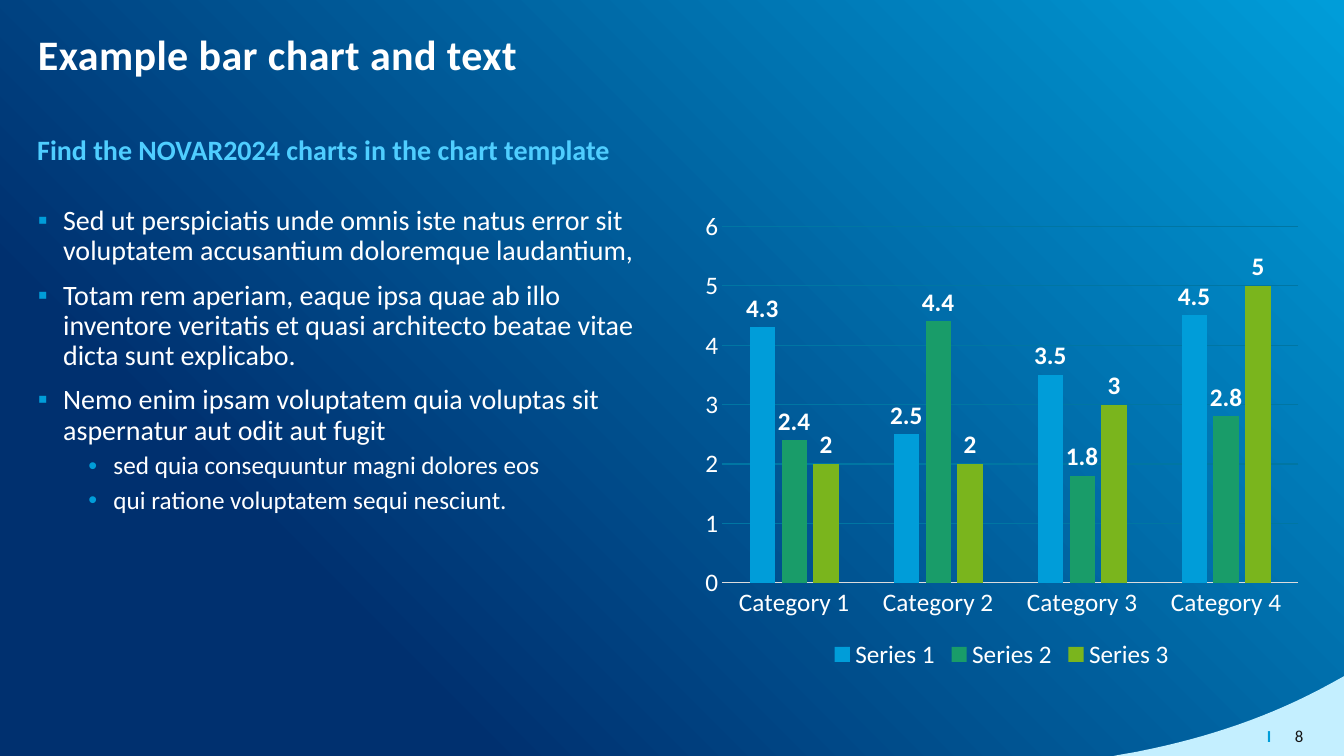
from lxml.etree import SubElement
from pptx import Presentation
from pptx.chart.data import CategoryChartData
from pptx.dml.color import RGBColor
from pptx.enum.chart import XL_CHART_TYPE, XL_LABEL_POSITION, XL_LEGEND_POSITION, XL_TICK_MARK
from pptx.enum.text import MSO_ANCHOR, PP_ALIGN
from pptx.oxml.ns import qn
from pptx.util import Pt

COLOURS = {
    "white": "FFFFFF", "ink": "151515", "navy": "00306F", "blue": "009DD9",
    "sky": "4FCEFF", "pale": "C4EFFF", "green": "199C69", "lime": "7AB51D",
    "axis": "DCDCDC", "grid": "0076A3",
}
FONT = "Calibri"
WIDTH, HEIGHT = 960, 540

# Level: bullet, left indent, space before, text size
BULLET_LEVELS = [("▪", 18, 10, 20), ("•", 54, 5, 18)]
BULLETS = [
    (0, "Sed ut perspiciatis unde omnis iste natus error sit voluptatem "
        "accusantium doloremque laudantium,"),
    (0, "Totam rem aperiam, eaque ipsa quae ab illo inventore veritatis et "
        "quasi architecto beatae vitae dicta sunt explicabo."),
    (0, "Nemo enim ipsam voluptatem quia voluptas sit aspernatur aut odit aut fugit"),
    (1, "sed quia consequuntur magni dolores eos"),
    (1, "qui ratione voluptatem sequi nesciunt."),
]
CATEGORIES = ["Category 1", "Category 2", "Category 3", "Category 4"]
SERIES = [
    ("Series 1", "blue", (4.3, 2.5, 3.5, 4.5)),
    ("Series 2", "green", (2.4, 4.4, 1.8, 2.8)),
    ("Series 3", "lime", (2, 2, 3, 5)),
]


def rgb(colour):
    return RGBColor.from_string(COLOURS[colour])


def style_font(font, size, colour, bold=False):
    font.name, font.size, font.bold = FONT, Pt(size), bold
    font.color.rgb = rgb(colour)


def add_frame(slide, box, anchor=MSO_ANCHOR.TOP):
    frame = slide.shapes.add_textbox(*map(Pt, box)).text_frame
    frame.word_wrap = True
    frame.vertical_anchor = anchor
    return frame


def add_run(paragraph, words, size, colour, bold=False):
    run = paragraph.add_run()
    run.text = words
    style_font(run.font, size, colour, bold)
    return run


def add_background(slide):
    fill = slide.background.fill
    fill.gradient()
    fill.gradient_angle = 225
    for stop, (position, colour) in zip(fill.gradient_stops, [(0, "blue"), (0.77, "navy")]):
        stop.position = position
        stop.color.rgb = rgb(colour)


def bezier(points, steps=16):
    """Points along a cubic curve, without its start."""
    for step in range(1, steps + 1):
        t = step / steps
        weights = ((1 - t) ** 3, 3 * t * (1 - t) ** 2, 3 * t ** 2 * (1 - t), t ** 3)
        yield tuple(sum(w * p[axis] for w, p in zip(weights, points)) for axis in (0, 1))


def add_corner(slide, box):
    left, top, width, height = box
    start, middle, end = (1.4, height), (20.9, height - 3.6), (157, 5)
    outline = [(width, height), (0, height), start]
    outline += bezier([start, (7.9, height - 1.4), (14.4, height - 2.2), middle])
    outline += bezier([middle, (68.4, 43.9), (113.8, 28.8), end])
    builder = slide.shapes.build_freeform(Pt(left + width), Pt(top))
    builder.add_line_segments([(Pt(left + x), Pt(top + y)) for x, y in outline], close=True)
    corner = builder.convert_to_shape()
    corner.shadow.inherit = False
    corner.fill.solid()
    corner.fill.fore_color.rgb = rgb("pale")
    corner.line.fill.background()


def add_footer(slide, box):
    left, top, width, height = box
    divider = add_frame(slide, (left + width - 45, top, 27, height), MSO_ANCHOR.MIDDLE)
    divider.paragraphs[0].alignment = PP_ALIGN.CENTER
    add_run(divider.paragraphs[0], "I", 12, "blue", True)
    number = add_frame(slide, box, MSO_ANCHOR.MIDDLE)
    number.paragraphs[0].alignment = PP_ALIGN.RIGHT
    add_run(number.paragraphs[0], "8", 12, "ink")


def add_heading(slide, box, words, size, colour, tracking=0):
    heading = add_frame(slide, box).paragraphs[0]
    heading.line_spacing = 0.9
    run = add_run(heading, words, size, colour, True)
    if tracking:
        run.font._element.set("spc", str(tracking))


def add_bullets(slide, box):
    frame = add_frame(slide, box)
    for index, (level, words) in enumerate(BULLETS):
        mark, indent, space, size = BULLET_LEVELS[level]
        paragraph = frame.add_paragraph() if index else frame.paragraphs[0]
        paragraph.level = level
        paragraph.line_spacing = 0.9
        if index:
            paragraph.space_before = Pt(space)
        properties = paragraph._p.get_or_add_pPr()
        properties.set("marL", str(Pt(indent)))
        properties.set("indent", str(Pt(-18)))
        bullet_colour = SubElement(properties, qn("a:buClr"))
        SubElement(bullet_colour, qn("a:srgbClr"), val=COLOURS["blue"])
        SubElement(properties, qn("a:buFont"), typeface="Arial")
        SubElement(properties, qn("a:buChar"), char=mark)
        add_run(paragraph, words, size, "white")


def add_bar_chart(slide, box):
    data = CategoryChartData()
    data.categories = CATEGORIES
    for name, _, values in SERIES:
        data.add_series(name, values)
    chart = slide.shapes.add_chart(
        XL_CHART_TYPE.COLUMN_CLUSTERED, *map(Pt, box), data).chart
    style_font(chart.font, 18, "white")
    chart.has_title = False
    chart.has_legend = True
    chart.legend.position = XL_LEGEND_POSITION.BOTTOM
    chart.legend.include_in_layout = False
    style_font(chart.legend.font, 18, "white")

    # Axes
    for axis in (chart.category_axis, chart.value_axis):
        axis.major_tick_mark = axis.minor_tick_mark = XL_TICK_MARK.NONE
        style_font(axis.tick_labels.font, 18, "white")
    value_axis = chart.value_axis
    value_axis.minimum_scale, value_axis.maximum_scale, value_axis.major_unit = 0, 6, 1
    value_axis.format.line.fill.background()
    for line, colour in ((chart.category_axis.format.line, "axis"),
                         (value_axis.major_gridlines.format.line, "grid")):
        line.color.rgb = rgb(colour)
        line.width = Pt(0.75)

    # Bars and their values
    plot = chart.plots[0]
    plot.gap_width, plot.overlap, plot.vary_by_categories = 219, -27, False
    for bars, (_, colour, _) in zip(plot.series, SERIES):
        bars.format.fill.solid()
        bars.format.fill.fore_color.rgb = rgb(colour)
        labels = bars.data_labels
        labels.show_value = True
        labels.position = XL_LABEL_POSITION.OUTSIDE_END
        style_font(labels.font, 18, "white", True)


def main():
    deck = Presentation()
    deck.slide_width, deck.slide_height = Pt(WIDTH), Pt(HEIGHT)
    slide = deck.slides.add_slide(deck.slide_layouts[6])
    add_background(slide)
    add_corner(slide, (794, 483, 166, 57))
    add_footer(slide, (722, 511, 216, 29))
    add_heading(slide, (20, 21, 794, 72), "Example bar chart and text", 30, "white", 30)
    add_heading(slide, (19.5, 93.6, 914, 50),
                "Find the NOVAR2024 charts in the chart template", 20, "sky")
    add_bullets(slide, (20, 144, 443, 338))
    add_bar_chart(slide, (495, 144, 441, 338))
    deck.save("out.pptx")


if __name__ == "__main__":
    main()
